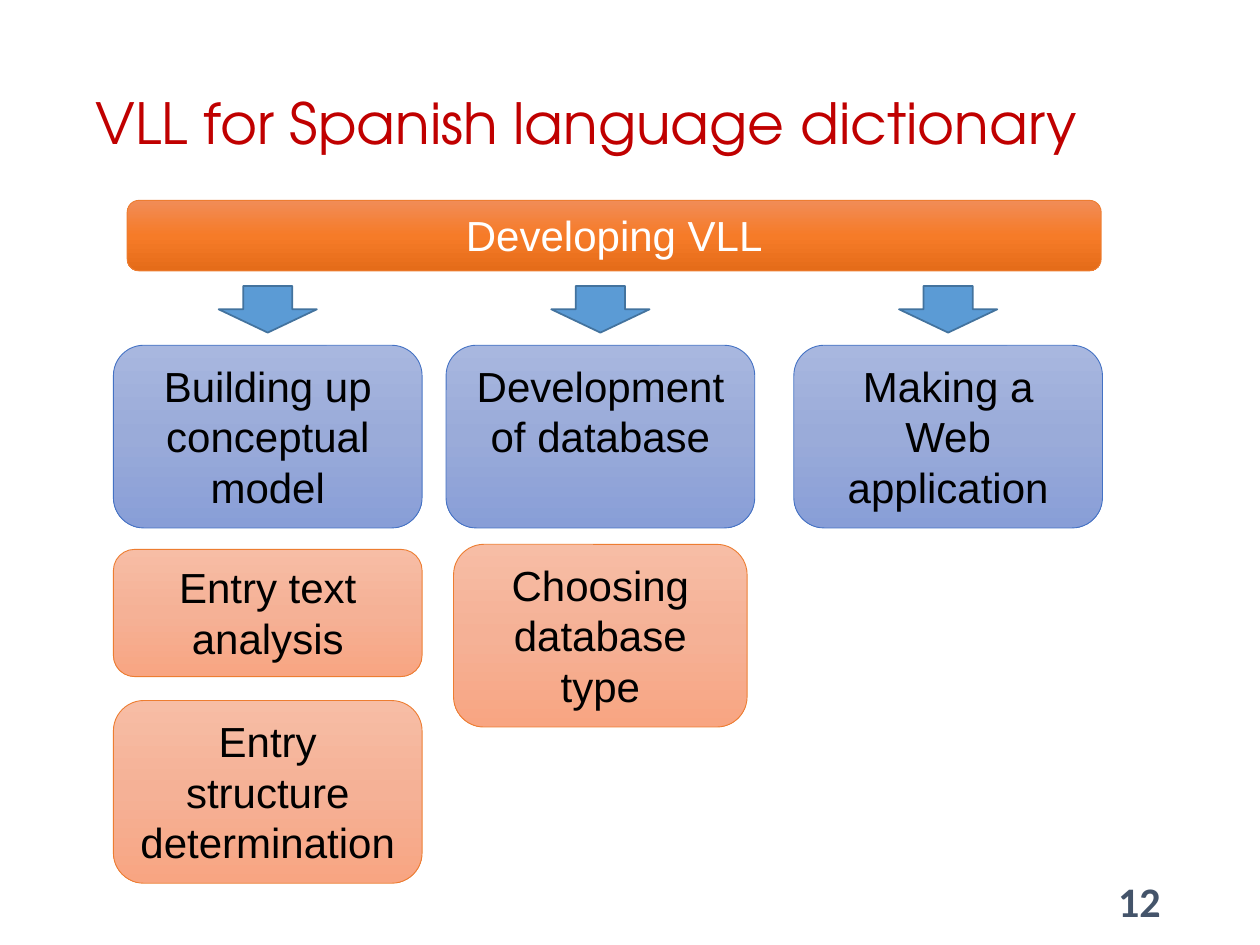
from copy import deepcopy

from pptx import Presentation
from pptx.dml.color import RGBColor
from pptx.enum.shapes import MSO_SHAPE as Shape
from pptx.enum.text import MSO_ANCHOR as Anchor, PP_ALIGN as Align
from pptx.oxml.ns import qn
from pptx.util import Inches, Pt

COLUMNS, ROWS = 100, 75
UNIT = Inches(10) / COLUMNS
BLUE = ("A8B7DF", "9AABD9", "889ED7"), "4472C4", "000000"
PEACH = ("F7BDA5", "F5B196", "F8A582"), "ED7D31", "000000"
ORANGE = ("F18C57", "F67B28", "E56C19"), "ED7D31", "FFFFFF"
STAGE_WIDTH, STAGE_HEIGHT = 24.5, 14.5
STAGES = [
    (9, "Building up conceptual model",
     [("Entry text analysis", 20.9, 24.5, 10.1),
      ("Entry structure determination", 32.9, 24.5, 14.5)]),
    (35.4, "Development of database",
     [("Choosing database type", 20.5, 23.3, 14.5)]),
    (63, "Making a Web application", []),
]


def color(value):
    """Turn a hex string into a colour."""
    return RGBColor.from_string(value)


def place(box):
    """Turn a box in grid units into slide lengths."""
    return [round(length * UNIT) for length in box]


def style_text(frame, text, size, font_name, hue, align, anchor):
    """Write one paragraph into a text frame and format it."""
    frame.text = text
    frame.word_wrap = True
    frame.vertical_anchor = anchor
    paragraph = frame.paragraphs[0]
    paragraph.alignment = align
    font = paragraph.runs[0].font
    font.size, font.name = Pt(size), font_name
    font.color.rgb = color(hue)
    return paragraph


def add_outlined(slide, kind, box, line, width):
    """Add a preset shape without shadow and with a coloured outline."""
    shape = slide.shapes.add_shape(kind, *place(box))
    shape.shadow.inherit = False
    shape.line.color.rgb = color(line)
    shape.line.width = Pt(width)
    return shape


def add_card(slide, box, text, theme):
    """Add a rounded card with a three-stop vertical gradient."""
    stops, line, ink = theme
    card = add_outlined(slide, Shape.FLOWCHART_ALTERNATE_PROCESS, box, line, 0.5)
    card.fill.gradient()
    card.fill.gradient_angle = 270
    stop_list = card._element.spPr.find(qn("a:gradFill")).find(qn("a:gsLst"))
    stop_list.append(deepcopy(stop_list[0]))
    for index, (stop, hue) in enumerate(zip(card.fill.gradient_stops, stops)):
        stop.position = index / 2
        stop.color.rgb = color(hue)
    style_text(card.text_frame, text, 24, "Arial", ink, Align.CENTER, Anchor.TOP)


def add_arrow(slide, box):
    """Add a blue arrow pointing down."""
    arrow = add_outlined(slide, Shape.DOWN_ARROW, box, "43739E", 1)
    arrow.fill.solid()
    arrow.fill.fore_color.rgb = color("5B9BD5")


def add_stage(slide, box, name, details):
    """Add an arrow, the stage card and its detail cards centred in a column."""
    left, top, width, height = box
    middle = left + width / 2
    add_arrow(slide, (middle - 3.9, top, 7.8, 3.7))
    stage_top = top + 4.7
    add_card(slide, (left, stage_top, width, height), name, BLUE)
    for text, offset, detail_width, detail_height in details:
        detail_box = (middle - detail_width / 2, top + offset, detail_width, detail_height)
        add_card(slide, detail_box, text, PEACH)


def add_title(slide, box, text):
    """Add the slide title."""
    frame = slide.shapes.add_textbox(*place(box)).text_frame
    paragraph = style_text(frame, text, 32.4, "TeX Gyre Adventor", "C00000",
                           Align.LEFT, Anchor.MIDDLE)
    paragraph.line_spacing = 0.9


def add_page_number(slide, box, number):
    """Add the page number in the lower right."""
    frame = slide.shapes.add_textbox(*place(box)).text_frame
    paragraph = style_text(frame, number, 24, "Calibri", "44546A",
                           Align.RIGHT, Anchor.MIDDLE)
    paragraph.runs[0].font.bold = True


def main():
    """Build the slide and save it."""
    presentation = Presentation()
    presentation.slide_width, presentation.slide_height = place((COLUMNS, ROWS))
    slide = presentation.slides.add_slide(presentation.slide_layouts[6])
    add_page_number(slide, (70.6, 69.5, 22.5, 4), "12")
    add_title(slide, (6.6, 5.5, 86.2, 9), "VLL for Spanish language dictionary")
    add_card(slide, (10.1, 15.9, 77.3, 5.6), "Developing VLL", ORANGE)
    for left, name, details in STAGES:
        add_stage(slide, (left, 22.7, STAGE_WIDTH, STAGE_HEIGHT), name, details)
    presentation.save("out.pptx")


if __name__ == "__main__":
    main()
